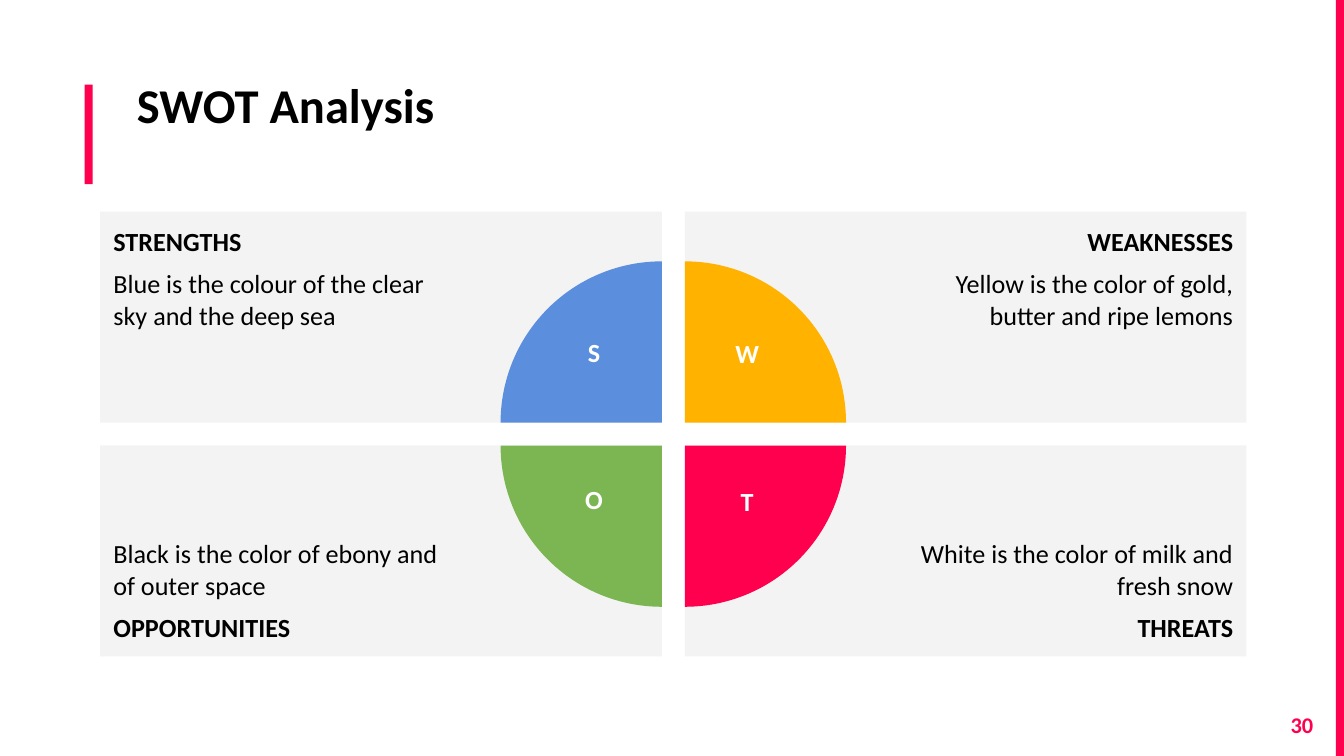
import pptx
import pptx.util
import pptx.dml.color
import pptx.enum.shapes
import pptx.enum.text

Inches, Pt = pptx.util.Inches, pptx.util.Pt
Shape = pptx.enum.shapes.MSO_SHAPE
Align = pptx.enum.text.PP_ALIGN
Anchor = pptx.enum.text.MSO_ANCHOR

# Content: heading, text, letter, letter centre (x, y), colour, turn
TITLE, NUMBER = "SWOT Analysis", "30"
PARTS = [
    ("STRENGTHS", "Blue is the colour of the clear sky and the deep sea",
     "S", (4.42, 2.66), "blue", 0),
    ("WEAKNESSES", "Yellow is the color of gold, butter and ripe lemons",
     "W", (5.56, 2.67), "gold", 90),
    ("OPPORTUNITIES", "Black is the color of ebony and of outer space",
     "O", (4.42, 3.76), "green", 270),
    ("THREATS", "White is the color of milk and fresh snow",
     "T", (5.56, 3.77), "red", 180),
]
COLORS = {"red": "FF004E", "blue": "5B8FDD", "gold": "FFB200",
          "green": "7CB652", "gray": "F3F3F3", "black": "000000",
          "white": "FFFFFF"}

# Layout in inches: a 16:9 slide, panels set around a centre point
WIDTH = 10
HEIGHT = WIDTH * 9 / 16
WIDE, HIGH, GAP = 4.18, 1.57, 0.17
LEFT, TOP = 5.01 - GAP / 2 - WIDE, 3.23 - GAP / 2 - HIGH
RADIUS, PAD, INNER = 1.2, 0.1, 1.5

# Text formats
HEAD = {"size": Pt(14), "name": "Calibri", "bold": True}
BODY = {**HEAD, "bold": False}
LARGE = {**HEAD, "size": Pt(26)}
SMALL = {**HEAD, "size": Pt(12)}
SPACED = {"space_before": Pt(6), "space_after": Pt(6)}


def color(key):
    return pptx.dml.color.RGBColor.from_string(COLORS[key])


def apply(target, values):
    for key, value in values.items():
        setattr(target, key, value)


def draw(kind, box, fill):
    shape = slide.shapes.add_shape(kind, *map(Inches, box))
    shape.shadow.inherit = False
    shape.fill.solid()
    shape.fill.fore_color.rgb = color(fill)
    shape.line.fill.background()
    return shape


def write(shape, lines, ink, pads, align, anchor=Anchor.TOP):
    frame = shape.text_frame
    sides = ("margin_left", "margin_top", "margin_right", "margin_bottom")
    apply(frame, dict(zip(sides, map(Inches, pads))))
    apply(frame, {"word_wrap": True, "vertical_anchor": anchor})
    for i, (text, font, space) in enumerate(lines):
        para = frame.add_paragraph() if i else frame.paragraphs[0]
        apply(para, {"alignment": align, **space})
        run = para.add_run()
        run.text = text
        apply(run.font, font)
        run.font.color.rgb = color(ink)


def label(box, text, font, ink, pad, align):
    shape = slide.shapes.add_textbox(*map(Inches, box))
    write(shape, [(text, font, {})], ink, [pad] * 4, align)


deck = pptx.Presentation()
deck.slide_width, deck.slide_height = Inches(WIDTH), Inches(HEIGHT)
slide = deck.slides.add_slide(deck.slide_layouts[6])

# Accent bars, title and page number
for bar in [(0.63, 0.63, 0.06, 0.74), (9.94, 0, 0.06, HEIGHT)]:
    draw(Shape.RECTANGLE, bar, "red")
label((0.92, 0.46, 3.53, 0.94), TITLE, LARGE, "black", PAD, Align.LEFT)
label((9.27, 5.19, 0.6, 0.43), NUMBER, SMALL, "red", PAD, Align.RIGHT)

# Panels, mirrored around the centre
for i, (head, text, *_) in enumerate(PARTS):
    row, col = divmod(i, 2)
    x, y = LEFT + col * (WIDE + GAP), TOP + row * (HIGH + GAP)
    panel = draw(Shape.RECTANGLE, (x, y, WIDE, HIGH), "gray")
    if row:
        lines, anchor = [(text, BODY, {}), (head, HEAD, SPACED)], Anchor.BOTTOM
    else:
        lines, anchor = [(head, HEAD, {}), (text, BODY, SPACED)], Anchor.TOP
    pads = (INNER, PAD, PAD, PAD) if col else (PAD, PAD, INNER, PAD)
    write(panel, lines, "black", pads,
          Align.RIGHT if col else Align.LEFT, anchor)

# Quarter circles at the inner corners, with their letters
for i, (_, _, letter, (mid, level), fill, turn) in enumerate(PARTS):
    row, col = divmod(i, 2)
    x, y = LEFT + WIDE + col * GAP, TOP + HIGH + row * GAP
    pie = draw(Shape.PIE,
               (x - RADIUS, y - RADIUS, 2 * RADIUS, 2 * RADIUS), fill)
    pie.adjustments[0], pie.adjustments[1] = 108, 162
    pie.rotation = turn
    label((mid - 0.25, level - 0.21, 0.5, 0.42), letter, HEAD, "white",
          0.05, Align.CENTER)

deck.save("out.pptx")
